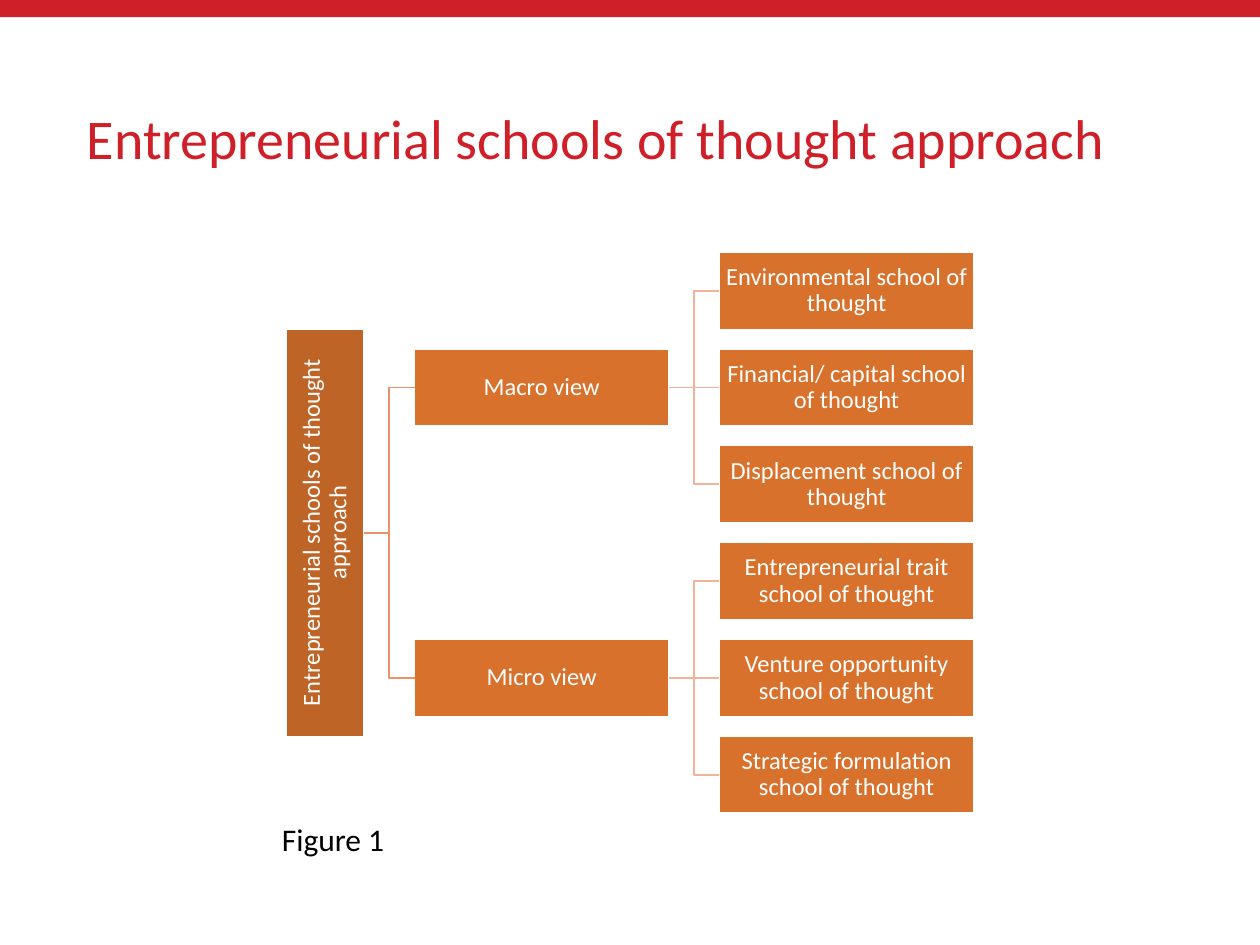
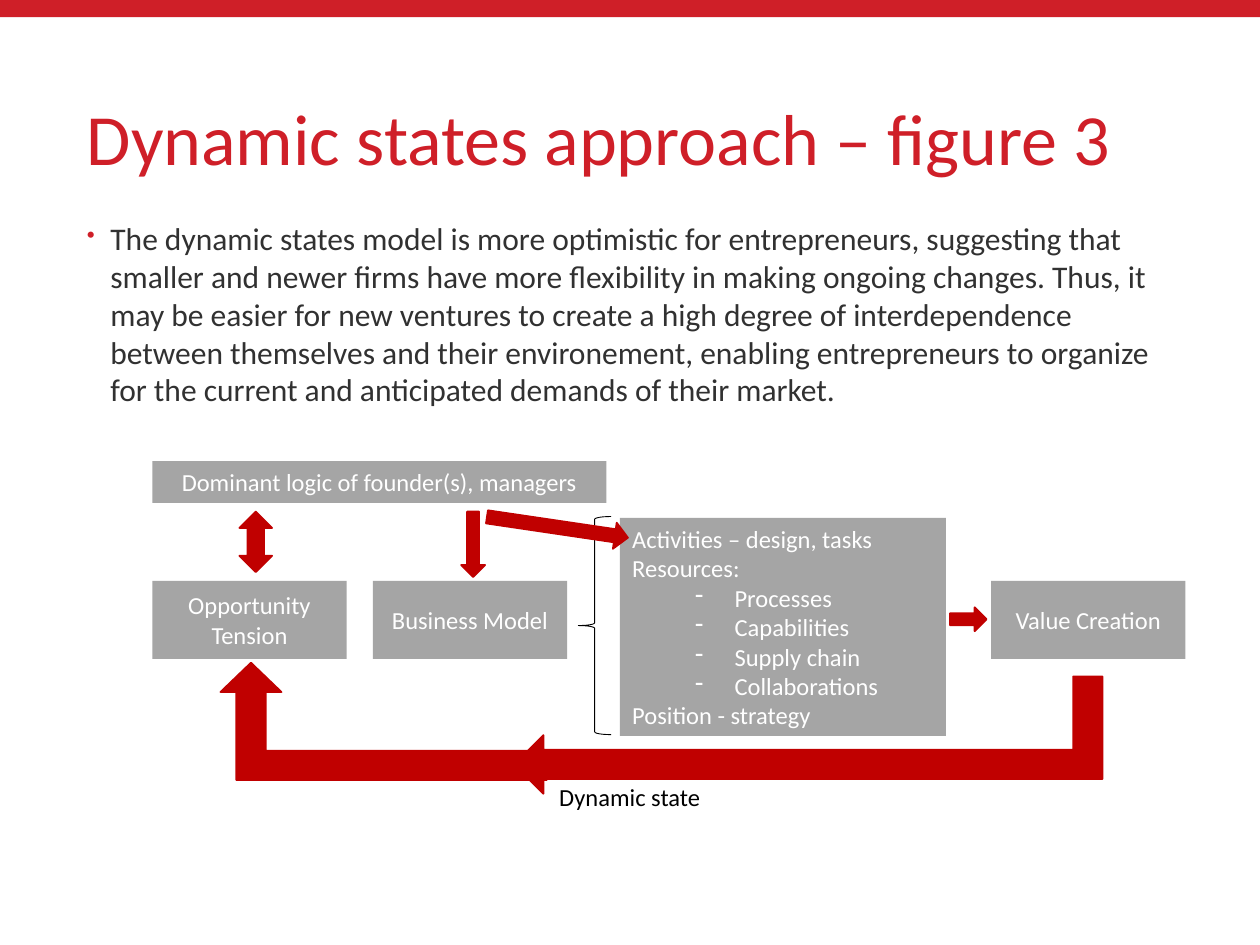
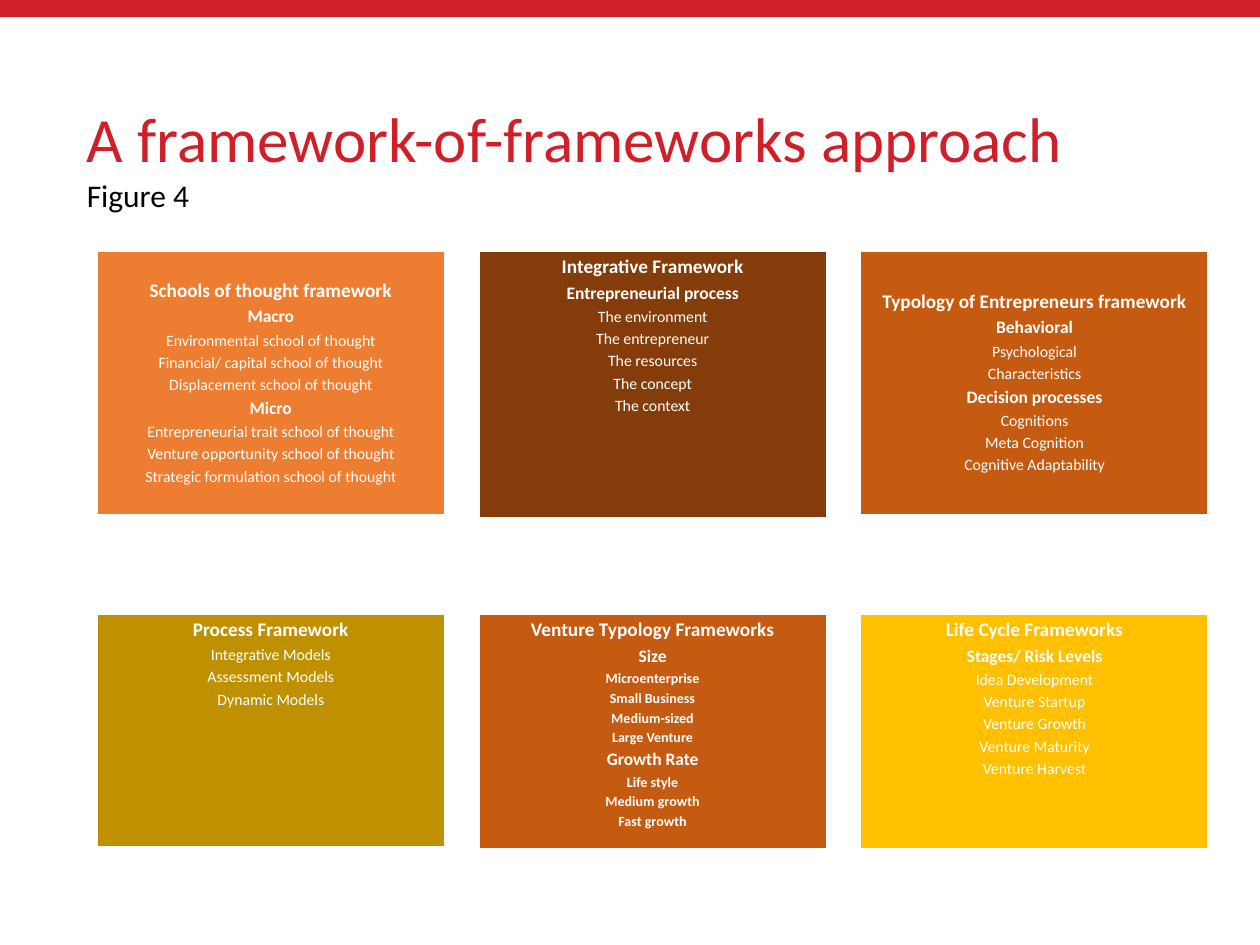
from lxml.etree import SubElement
from pptx import Presentation
from pptx.dml.color import RGBColor
from pptx.enum.shapes import MSO_CONNECTOR as LINK, MSO_SHAPE as SHAPE
from pptx.enum.text import MSO_ANCHOR as ANCHOR, PP_ALIGN as ALIGN
from pptx.oxml.ns import qn
from pptx.util import Pt

FONT = "Calibri"
COLORS = {
    "red": "CF1F28", "arrow": "C00000", "grey": "A5A5A5", "body": "313131",
    "white": "FFFFFF", "black": "000000", "root": "BE6427", "node": "D7712C",
    "stem": "EF9166", "twig": "F3B29A", "orange": "ED7D31", "brown": "843C0B",
    "rust": "C55A11", "olive": "BF9000", "gold": "FFC000",
}
# Size and weight of each kind of line on a framework card
STYLES = {"head": (11, True), "sub": (10, True), "item": (9, False), "small": (8, True)}
AFTER = 0.33  # space after a line, as a share of its text size


def paint(name):
    return RGBColor.from_string(COLORS[name])


def style(para, size, color="white", bold=False, align=ALIGN.LEFT):
    para.alignment = align
    font = para.font
    font.name, font.size, font.bold = FONT, Pt(size), bold
    font.color.rgb = paint(color)


def bullet(para, mark, left, hang, color=None, scale=None):
    props = para._p.get_or_add_pPr()
    props.set("marL", str(Pt(left)))
    props.set("indent", str(-Pt(hang)))
    if color:
        SubElement(SubElement(props, qn("a:buClr")), qn("a:srgbClr")).set("val", COLORS[color])
    if scale:
        SubElement(props, qn("a:buSzPct")).set("val", str(scale * 1000))
    SubElement(props, qn("a:buChar")).set("char", mark)


def lines(frame, texts):
    """Write one paragraph per text and return the paragraphs."""
    paras = [frame.paragraphs[0]] + [frame.add_paragraph() for _ in texts[1:]]
    for para, text in zip(paras, texts):
        para.text = text
    return paras


def label(slide, text, x, y, w, h, size, color="black", wrap=False, anchor=ANCHOR.TOP):
    frame = slide.shapes.add_textbox(Pt(x), Pt(y), Pt(w), Pt(h)).text_frame
    frame.word_wrap = wrap
    frame.vertical_anchor = anchor
    para = lines(frame, [text])[0]
    style(para, size, color)
    return para


def shape(slide, kind, x, y, w, h, fill=None, line=None, width=1, turn=0):
    item = slide.shapes.add_shape(kind, Pt(x), Pt(y), Pt(w), Pt(h))
    item.shadow.inherit = False
    item.rotation = turn
    if fill:
        item.fill.solid()
        item.fill.fore_color.rgb = paint(fill)
    else:
        item.fill.background()
    if line:
        item.line.color.rgb = paint(line)
        item.line.width = Pt(width)
    else:
        item.line.fill.background()
    return item


def arrow(slide, kind, x, y, w, h, turn=0, flip=False):
    item = shape(slide, kind, x, y, w, h, "arrow", "arrow", turn=turn)
    if flip:
        item._element.spPr.find(qn("a:xfrm")).set("flipH", "1")
    return item


def inset(frame, size):
    frame.margin_left = frame.margin_right = Pt(size)
    frame.margin_top = frame.margin_bottom = Pt(size)


def node(slide, text, x, y, w, h, fill="node", turn=0):
    item = shape(slide, SHAPE.RECTANGLE, x, y, w, h, fill, "white", turn=turn)
    inset(item.text_frame, 0.72)
    para = lines(item.text_frame, [text])[0]
    style(para, 14, align=ALIGN.CENTER)
    para.line_spacing = 0.9
    return item


def block(slide, text, x, y, w, h):
    item = shape(slide, SHAPE.RECTANGLE, x, y, w, h, "grey")
    style(lines(item.text_frame, [text])[0], 14, align=ALIGN.CENTER)


def link(slide, x1, y1, x2, y2, color):
    kind = LINK.STRAIGHT if y1 == y2 else LINK.ELBOW
    item = slide.shapes.add_connector(kind, Pt(x1), Pt(y1), Pt(x2), Pt(y2))
    item.line.color.rgb = paint(color)
    item.line.width = Pt(1)
    SubElement(item._element.spPr, qn("a:effectLst"))
    return item


def card(slide, fill, x, y, w, h, groups, anchor=ANCHOR.TOP):
    item = shape(slide, SHAPE.RECTANGLE, x, y, w, h, fill, "white")
    frame = item.text_frame
    inset(frame, 3.6)
    frame.vertical_anchor = anchor
    rows = [(kind, text) for kind, *texts in groups for text in texts]
    for para, (kind, _) in zip(lines(frame, [text for _, text in rows]), rows):
        size, bold = STYLES[kind]
        style(para, size, bold=bold, align=ALIGN.CENTER)
        para.line_spacing = 0.9
        para.space_after = Pt(round(size * AFTER, 2))


def page(deck, title, size):
    slide = deck.slides.add_slide(deck.slide_layouts[6])
    shape(slide, SHAPE.RECTANGLE, 0, 0, 720, 9.8, "red")
    para = label(slide, title, 42.5, 28.8, 635, 104.4, size, "red", True, ANCHOR.MIDDLE)
    para.line_spacing = 0.9
    return slide


def schools(deck):
    slide = page(deck, "Entrepreneurial schools of thought approach", 32)
    views = {
        "Macro view": ["Environmental school of thought",
                       "Financial/ capital school of thought",
                       "Displacement school of thought"],
        "Micro view": ["Entrepreneurial trait school of thought",
                       "Venture opportunity school of thought",
                       "Strategic formulation school of thought"],
    }
    wide, high, step, top = 145.4, 44.3, 55.3, 144
    left, right = 236.9, 411.1
    long, mid = 233.3, top + 2.5 * step + high / 2
    edge = 208
    node(slide, "Entrepreneurial schools of thought approach",
         edge - high / 2 - long / 2, mid - high / 2, long, high, "root", 270)
    for i, (view, leaves) in enumerate(views.items()):
        start = top + 3 * i * step
        y = start + step
        hub = node(slide, view, left, y, wide, high)
        link(slide, edge, mid, left, y + high / 2, "stem")
        for j, name in enumerate(leaves):
            spot = start + j * step
            leaf = node(slide, name, right, spot, wide, high)
            twig = link(slide, left + wide, y + high / 2, right, spot + high / 2, "twig")
            if j == 1:
                twig.begin_connect(hub, 3)
                twig.end_connect(leaf, 1)
    label(slide, "Figure 1", 154, 465.1, 73.4, 28.8, 18)


def states(deck):
    slide = page(deck, "Dynamic states approach – figure 3", 41.2)
    para = label(
        slide,
        "The dynamic states model is more optimistic for entrepreneurs, suggesting that "
        "smaller and newer firms have more flexibility in making ongoing changes. Thus, it "
        "may be easier for new ventures to create a high degree of interdependence between "
        "themselves and their environement, enabling entrepreneurs to organize for the "
        "current and anticipated demands of their market.",
        42.5, 121.7, 635, 321, 18, "body", True)
    # Bullet marks must come before the font settings in the paragraph
    para._p.remove(para._p.pPr)
    bullet(para, "•", 13.5, 13.5, "red", 75)
    style(para, 18, "body")

    arrow(slide, SHAPE.DOWN_ARROW, 546.5, 343.4, 13.7, 20.9, 270)
    block(slide, "Dominant logic of founder(s), managers", 87.1, 263.6, 259.4, 23.8)
    steps = {"Opportunity Tension": 87.1, "Business Model": 213.1, "Value Creation": 566.4}
    for text, x in steps.items():
        block(slide, text, x, 331.9, 111, 44.6)

    tasks = shape(slide, SHAPE.RECTANGLE, 354.2, 295.9, 186.4, 124.6, "grey")
    tasks.text_frame.vertical_anchor = ANCHOR.TOP
    texts = ["Activities – design, tasks", "Resources:", "Processes", "Capabilities",
             "Supply chain", "Collaborations", "Position - strategy"]
    for i, para in enumerate(lines(tasks.text_frame, texts)):
        if 2 <= i <= 5:
            para.level = 1
            bullet(para, "-", 58.5, 22.5)
        style(para, 14)
    shape(slide, SHAPE.LEFT_BRACE, 330.5, 295.2, 18.7, 124.6, line="black", width=0.5)

    back = arrow(slide, SHAPE.BENT_UP_ARROW, 126, 378.7, 186.5, 67, flip=True)
    back.adjustments[1] = 0.26
    arrow(slide, SHAPE.BENT_UP_ARROW, 428.4, 252, 67, 336.2, 270, True)
    arrow(slide, SHAPE.UP_DOWN_ARROW, 136.8, 292.3, 18.7, 34.6)
    arrow(slide, SHAPE.DOWN_ARROW, 263.5, 292.3, 13.7, 37.4)
    arrow(slide, SHAPE.DOWN_ARROW, 311, 260.6, 15.1, 81.4, 278.4)
    label(slide, "Dynamic state", 312.5, 443.5, 95.8, 24.5, 14)


def frames(deck):
    slide = page(deck, "A framework-of-frameworks approach", 36)
    cards = [
        ("orange", 151.2, ANCHOR.MIDDLE, [
            ("head", "Schools of thought framework"),
            ("sub", "Macro"),
            ("item", "Environmental school of thought", "Financial/ capital school of thought",
             "Displacement school of thought"),
            ("sub", "Micro"),
            ("item", "Entrepreneurial trait school of thought",
             "Venture opportunity school of thought",
             "Strategic formulation school of thought")]),
        ("brown", 152.6, ANCHOR.TOP, [
            ("head", "Integrative Framework"),
            ("sub", "Entrepreneurial process"),
            ("item", "The environment", "The entrepreneur", "The resources",
             "The concept", "The context")]),
        ("rust", 151.2, ANCHOR.MIDDLE, [
            ("head", "Typology of Entrepreneurs framework"),
            ("sub", "Behavioral"),
            ("item", "Psychological", "Characteristics"),
            ("sub", "Decision processes"),
            ("item", "Cognitions", "Meta Cognition", "Cognitive Adaptability")]),
        ("olive", 133.2, ANCHOR.TOP, [
            ("head", "Process Framework"),
            ("item", "Integrative Models", "Assessment Models", "Dynamic Models")]),
        ("rust", 134.6, ANCHOR.TOP, [
            ("head", "Venture Typology Frameworks"),
            ("sub", "Size"),
            ("small", "Microenterprise", "Small Business", "Medium-sized", "Large Venture"),
            ("sub", "Growth Rate"),
            ("small", "Life style", "Medium growth", "Fast growth")]),
        ("gold", 134.6, ANCHOR.TOP, [
            ("head", "Life Cycle Frameworks"),
            ("sub", "Stages/ Risk Levels"),
            ("item", "Idea Development", "Venture Startup", "Venture Growth",
             "Venture Maturity", "Venture Harvest")]),
    ]
    for i, (fill, high, anchor, groups) in enumerate(cards):
        row, col = divmod(i, 3)
        card(slide, fill, 55.4 + 218.2 * col, 143.3 + 207.4 * row, 198.7, high, groups, anchor)
    label(slide, "Figure 4", 42.5, 97.2, 73.4, 28.8, 18)


def main():
    deck = Presentation()
    deck.slide_width, deck.slide_height = Pt(720), Pt(540)
    schools(deck)
    states(deck)
    frames(deck)
    deck.save("out.pptx")


if __name__ == "__main__":
    main()
